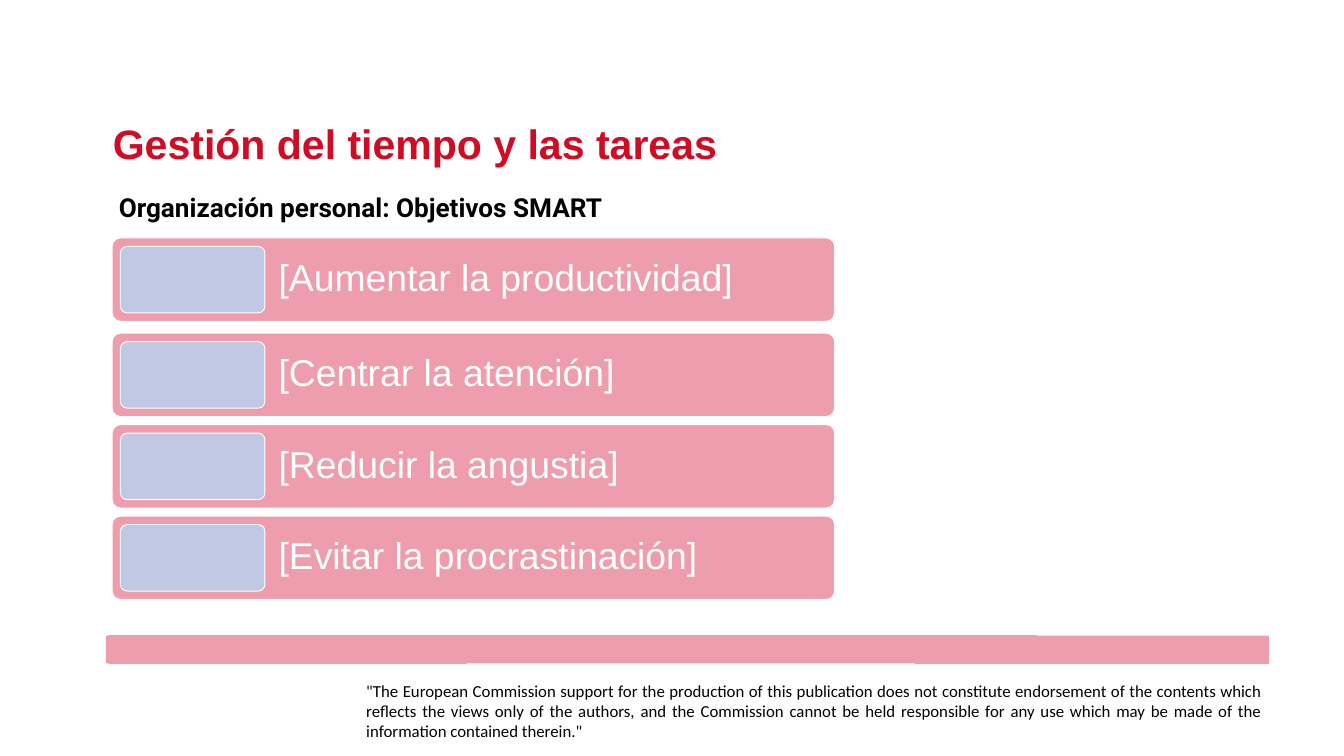
from pptx import Presentation
from pptx import util as u
from pptx.dml import color
from pptx.enum import shapes, text

PINK = color.RGBColor(0xED, 0x9D, 0xAB)
LAVENDER = color.RGBColor(0xC0, 0xC8, 0xE3)
RED = color.RGBColor(0xD0, 0x0B, 0x24)
BLACK = color.RGBColor(0, 0, 0)
WHITE = color.RGBColor(0xFF, 0xFF, 0xFF)


def write(shape, wording, font_color, font, margins, paragraph_format):
    frame = shape.text_frame
    frame.word_wrap = True
    for side, margin in zip(("left", "top", "right", "bottom"), margins):
        setattr(frame, f"margin_{side}", u.Pt(margin))
    paragraph = frame.paragraphs[0]
    for name, value in paragraph_format.items():
        setattr(paragraph, name, value)
    run = paragraph.add_run()
    run.text = wording
    for name, value in font.items():
        setattr(run.font, name, value)
    run.font.color.rgb = font_color


def add_rounded(slide, left, top, width, height, fill):
    shape = slide.shapes.add_shape(
        shapes.MSO_SHAPE.ROUNDED_RECTANGLE,
        u.Pt(left), u.Pt(top), u.Pt(width), u.Pt(height))
    shape.adjustments[0] = 0.1
    shape.shadow.inherit = False
    shape.fill.solid()
    shape.fill.fore_color.rgb = fill
    shape.line.color.rgb = WHITE
    shape.line.width = u.Pt(1)
    return shape


presentation = Presentation()
presentation.slide_width = u.Pt(1440)
presentation.slide_height = u.Pt(810)
slide = presentation.slides.add_slide(presentation.slide_layouts[6])

band_outline = [
    (1359.4, 681), (1111, 681), (1111, 680.4), (116.6, 680.4), (116.6, 681),
    (113.8, 681), (113.8, 710.8), (116.6, 710.8), (116.6, 711.4),
    (499.7, 711.4), (499.7, 710.8), (980.6, 710.8), (980.6, 711.4),
    (1359.4, 711.4),
]
vertices = [(u.Pt(x), u.Pt(y)) for x, y in band_outline]
builder = slide.shapes.build_freeform(*vertices[0], scale=1.0)
builder.add_line_segments(vertices[1:], close=True)
band = builder.convert_to_shape()
band.shadow.inherit = False
band.fill.solid()
band.fill.fore_color.rgb = PINK
band.line.fill.background()

disclaimer = (
    "\"The European Commission support for the production of this publication "
    "does not constitute endorsement of the contents which reflects the views "
    "only of the authors, and the Commission cannot be held responsible for any "
    "use which may be made of the information contained therein.\"")
text_boxes = [
    ((392.4, 730.8, 959.8, 54.7), disclaimer, BLACK,
     {"name": "Calibri", "size": u.Pt(18)}, (0, 0, 0, 0),
     {"alignment": text.PP_ALIGN.JUSTIFY, "line_spacing": 0.98}),
    ((120.2, 201.6, 1038.2, 40.3), "Organización personal: Objetivos SMART", BLACK,
     {"name": "Roboto", "size": u.Pt(28), "bold": True}, (7.2, 3.6, 7.2, 3.6), {}),
    ((113.8, 123.8, 694, 59.8), "Gestión del tiempo y las tareas", RED,
     {"name": "Arial", "size": u.Pt(44), "bold": True}, (7.2, 3.6, 7.2, 3.6), {}),
]
for position, wording, font_color, font, margins, paragraph_format in text_boxes:
    box = slide.shapes.add_textbox(*[u.Pt(length) for length in position])
    write(box, wording, font_color, font, margins, paragraph_format)

goals = [
    (255, "[Aumentar la productividad]"),
    (357, "[Centrar la atención]"),
    (455, "[Reducir la angustia]"),
    (553, "[Evitar la procrastinación]"),
]
for top, goal in goals:
    bar = add_rounded(slide, 120.2, top, 774, 89.3, PINK)
    bar.text_frame.vertical_anchor = text.MSO_ANCHOR.MIDDLE
    write(bar, goal, WHITE, {"name": "Arial", "size": u.Pt(40)},
          (175.7, 12.2, 12.2, 12.2),
          {"alignment": text.PP_ALIGN.LEFT, "line_spacing": 0.9})
    add_rounded(slide, 129, top + 9, 154.8, 71.3, LAVENDER)

presentation.save("out.pptx")
